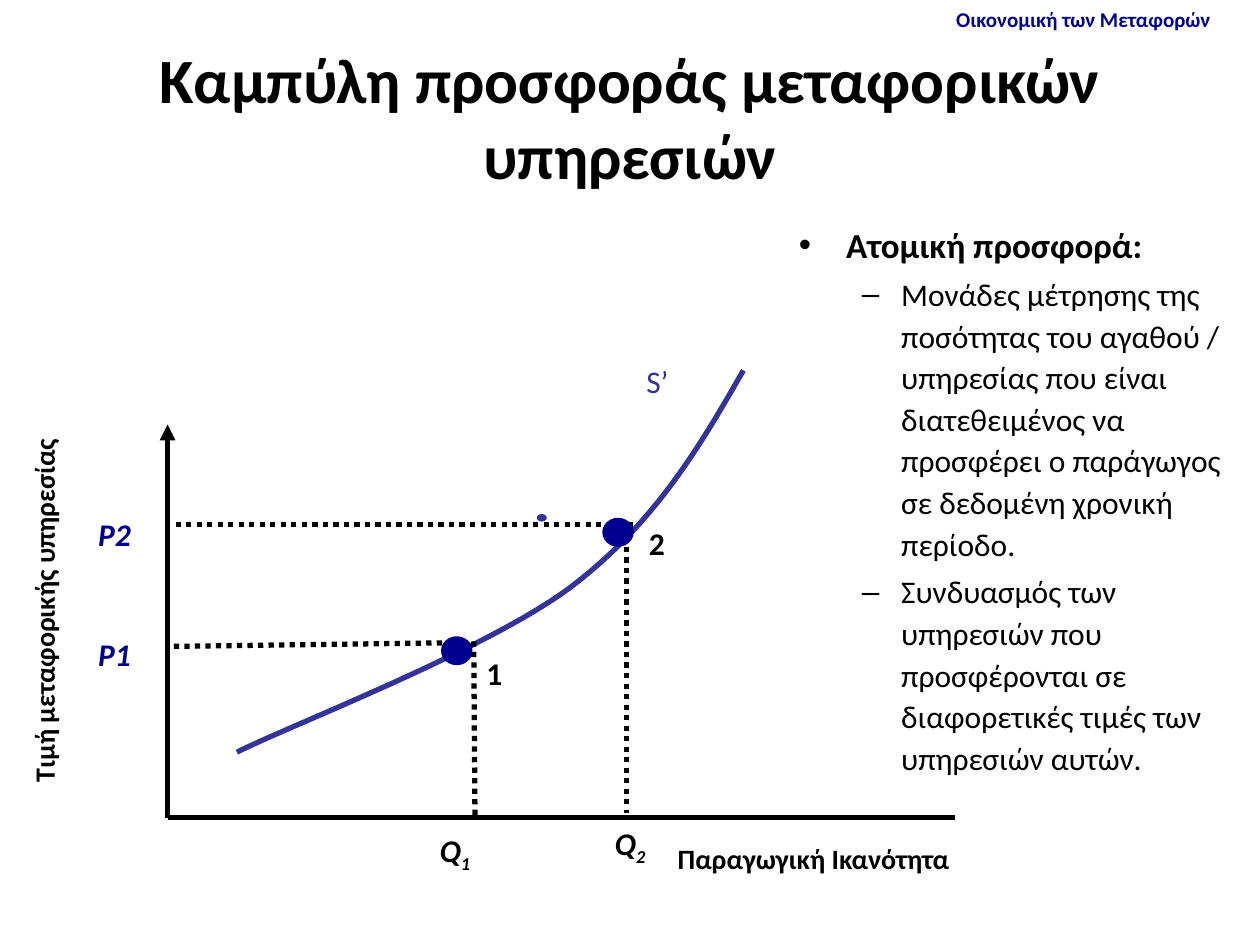
from typing import NamedTuple

from lxml.etree import SubElement
from pptx import Presentation
from pptx.dml.color import RGBColor
from pptx.enum.dml import MSO_LINE
from pptx.enum.shapes import MSO_CONNECTOR, MSO_SHAPE
from pptx.enum.text import MSO_ANCHOR, MSO_AUTO_SIZE, PP_ALIGN
from pptx.oxml.ns import qn
from pptx.util import Inches, Pt

COLORS = {"black": "000000", "navy": "000090", "curve": "333399"}
FONT = "Calibri"
BOX_INSETS = (0.1, 0.05, 0.1, 0.05)
TIGHT_INSETS = (0.04, 0, 0.04, 0)


class Label(NamedTuple):
    text: str
    left: float
    top: float
    width: float
    height: float
    size: int = 18
    color: str = "black"
    bold: bool = True
    italic: bool = False
    subscript: str = ""
    insets: tuple = BOX_INSETS
    wrap: bool = True
    align: PP_ALIGN = PP_ALIGN.LEFT
    rotation: int = 0


class Line(NamedTuple):
    start: tuple
    end: tuple
    dotted: bool = False
    arrow_at_start: bool = False


class Dot(NamedTuple):
    left: float
    top: float
    width: float
    height: float
    color: str


AXES = [
    Line((1.33, 3.37), (1.33, 6.49), arrow_at_start=True),
    Line((7.58, 6.49), (1.33, 6.49)),
]
GUIDES = [
    Line((1.38, 5.13), (3.69, 5.1), dotted=True),
    Line((3.76, 5.09), (3.77, 6.49), dotted=True),
    Line((1.31, 4.16), (5.03, 4.16), dotted=True),
    Line((4.97, 4.34), (4.97, 6.45), dotted=True),
]
DOTS = [
    Dot(4.26, 4.08, 0.08, 0.06, "curve"),
    Dot(3.5, 5.05, 0.25, 0.23, "navy"),
    Dot(4.78, 4.11, 0.25, 0.23, "navy"),
]
LABELS = [
    Label("Οικονομική των Μεταφορών", 7.49, 0, 2.25, 0.3, 12, "navy", wrap=False),
    Label("S’", 5.09, 2.87, 0.38, 0.4, color="curve", bold=False, insets=TIGHT_INSETS),
    Label("1", 3.82, 5.19, 0.52, 0.3, insets=TIGHT_INSETS),
    Label("2", 5.11, 4.16, 0.17, 0.3, insets=TIGHT_INSETS),
    Label("Q", 3.39, 6.55, 0.75, 0.4, italic=True, subscript="1"),
    Label("Q", 4.78, 6.49, 0.75, 0.4, italic=True, subscript="2"),
    Label("P1", 0.68, 4.99, 0.71, 0.4, color="navy", italic=True),
    Label("P2", 0.68, 4.04, 0.71, 0.4, color="navy", italic=True),
    Label("Τιμή μεταφορικής υπηρεσίας", -1.76, 4.66, 4.22, 0.37, 16,
          align=PP_ALIGN.CENTER, rotation=270),
    Label("Παραγωγική Ικανότητα", 5.28, 6.63, 3.98, 0.37, 16),
]
SUPPLY_CURVE = [
    ((5.9, 2.94), (5.55, 3.55), (5.2, 4.15), (4.53, 4.66)),
    ((4.53, 4.66), (3.86, 5.16), (2.32, 5.75), (1.88, 5.97)),
]
BULLETS = [
    (0, "Ατομική προσφορά:"),
    (1, "Μονάδες μέτρησης της ποσότητας του αγαθού / υπηρεσίας που είναι "
        "διατεθειμένος να προσφέρει ο παράγωγος σε δεδομένη χρονική περίοδο."),
    (1, "Συνδυασμός των υπηρεσιών που προσφέρονται σε διαφορετικές τιμές "
        "των υπηρεσιών αυτών."),
]


def rgb(color: str) -> RGBColor:
    return RGBColor.from_string(COLORS[color])


def format_runs(paragraph, size: int, color: str, bold: bool, italic: bool = False) -> None:
    for run in paragraph.runs:
        run.font.name = FONT
        run.font.size = Pt(size)
        run.font.color.rgb = rgb(color)
        run.font.bold = bold
        run.font.italic = italic


def place(shape, left: float, top: float, width: float, height: float) -> None:
    shape.left, shape.top = Inches(left), Inches(top)
    shape.width, shape.height = Inches(width), Inches(height)


def add_label(slide, label: Label) -> None:
    shape = slide.shapes.add_textbox(
        *(Inches(value) for value in (label.left, label.top, label.width, label.height)))
    shape.rotation = label.rotation
    frame = shape.text_frame
    frame.word_wrap = label.wrap
    frame.margin_left, frame.margin_top, frame.margin_right, frame.margin_bottom = (
        Inches(inset) for inset in label.insets)
    frame.text = label.text
    paragraph = frame.paragraphs[0]
    paragraph.alignment = label.align
    if label.subscript:
        run = paragraph.add_run()
        run.text = label.subscript
        run.font._element.set("baseline", "-25000")
    format_runs(paragraph, label.size, label.color, label.bold, label.italic)


def add_line(slide, line: Line) -> None:
    connector = slide.shapes.add_connector(
        MSO_CONNECTOR.STRAIGHT, *(Inches(value) for value in line.start + line.end))
    connector.line.color.rgb = rgb("black")
    connector.line.width = Pt(3)
    if line.dotted:
        connector.line.dash_style = MSO_LINE.ROUND_DOT
    if line.arrow_at_start:
        SubElement(connector.line._get_or_add_ln(), qn("a:headEnd"), type="triangle")
    SubElement(connector._element.spPr, qn("a:effectLst"))


def add_dot(slide, dot: Dot) -> None:
    shape = slide.shapes.add_shape(
        MSO_SHAPE.OVAL, *(Inches(value) for value in dot[:4]))
    shape.shadow.inherit = False
    shape.fill.solid()
    shape.fill.fore_color.rgb = rgb(dot.color)
    shape.line.fill.background()


def bezier_point(controls: tuple, t: float) -> tuple:
    weights = ((1 - t) ** 3, 3 * t * (1 - t) ** 2, 3 * t ** 2 * (1 - t), t ** 3)
    return tuple(
        Inches(sum(weight * point[axis] for weight, point in zip(weights, controls)))
        for axis in (0, 1))


def add_curve(slide, segments: list, steps: int = 24) -> None:
    points = [bezier_point(controls, step / steps)
              for controls in segments for step in range(1, steps + 1)]
    builder = slide.shapes.build_freeform(*bezier_point(segments[0], 0))
    builder.add_line_segments(points, close=False)
    shape = builder.convert_to_shape()
    shape.shadow.inherit = False
    shape.fill.background()
    shape.line.color.rgb = rgb("curve")
    shape.line.width = Pt(3)


def fill_title(title) -> None:
    place(title, 0.5, 0.3, 9, 1.25)
    frame = title.text_frame
    frame.text = "Καμπύλη προσφοράς μεταφορικών υπηρεσιών"
    frame.auto_size = MSO_AUTO_SIZE.NONE
    frame.vertical_anchor = MSO_ANCHOR.MIDDLE
    format_runs(frame.paragraphs[0], 36, "black", True)


def fill_body(body) -> None:
    place(body, 6.24, 1.72, 3.63, 3.44)
    frame = body.text_frame
    frame.text = "\n".join(text for _, text in BULLETS)
    frame.auto_size = MSO_AUTO_SIZE.NONE
    for paragraph, (level, _) in zip(frame.paragraphs, BULLETS):
        paragraph.level = level
        if level:
            paragraph.line_spacing = 1.1
        format_runs(paragraph, 18 if level else 20, "black", level == 0)
    frame.paragraphs[0].space_before = Pt(0)


def main() -> None:
    presentation = Presentation()
    presentation.slide_width, presentation.slide_height = Inches(10), Inches(7.5)
    slide = presentation.slides.add_slide(presentation.slide_layouts[1])
    fill_title(slide.shapes.title)
    fill_body(slide.placeholders[1])
    add_curve(slide, SUPPLY_CURVE)
    for line in AXES + GUIDES:
        add_line(slide, line)
    for dot in DOTS:
        add_dot(slide, dot)
    for label in LABELS:
        add_label(slide, label)
    presentation.save("out.pptx")


if __name__ == "__main__":
    main()
